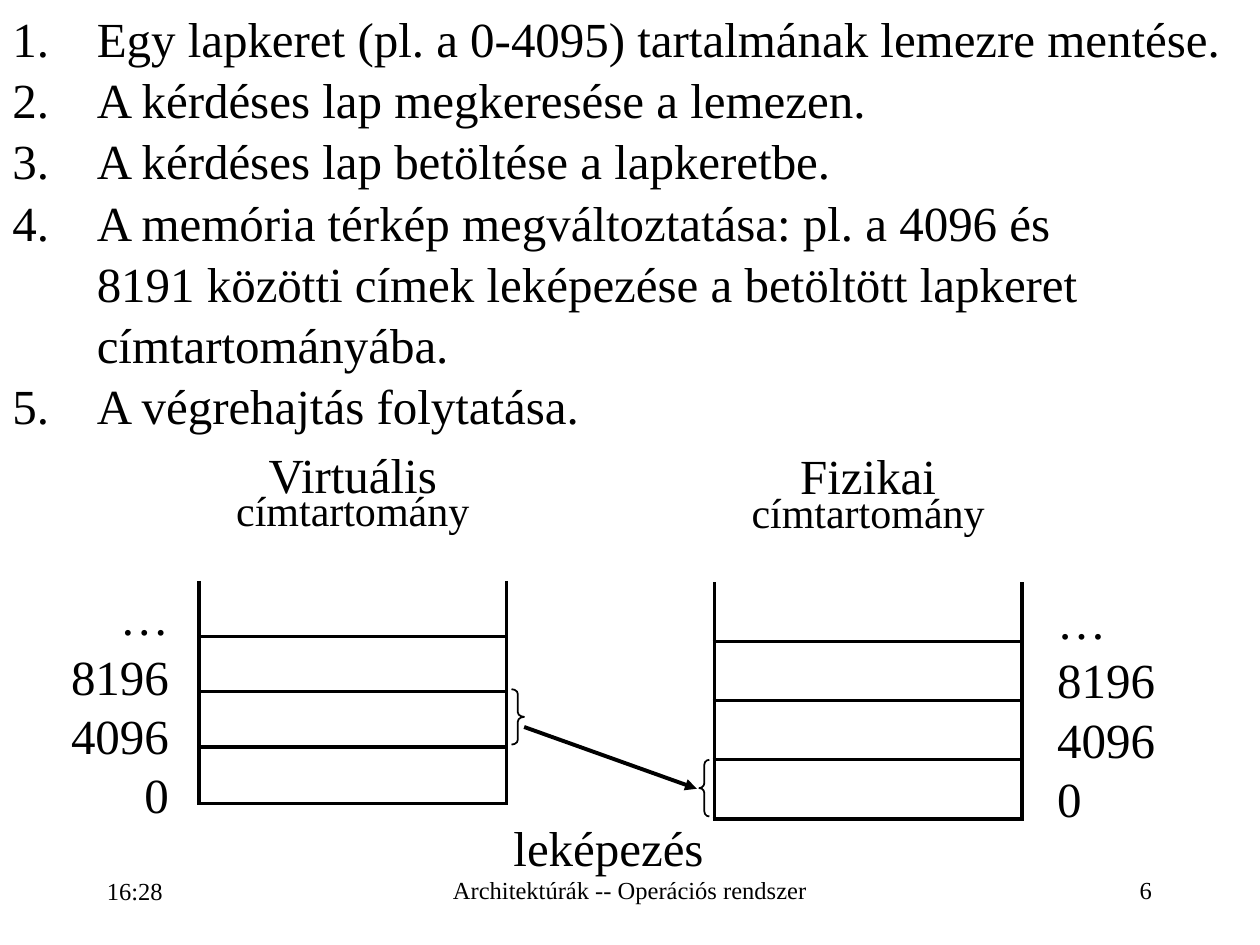
from lxml import etree
from pptx import Presentation
from pptx.dml.color import RGBColor
from pptx.enum.shapes import MSO_CONNECTOR, MSO_SHAPE
from pptx.enum.text import MSO_ANCHOR, PP_ALIGN
from pptx.oxml.ns import qn
from pptx.util import Inches, Pt

LEFT, CENTER, RIGHT = PP_ALIGN.LEFT, PP_ALIGN.CENTER, PP_ALIGN.RIGHT
TOP, MIDDLE = MSO_ANCHOR.TOP, MSO_ANCHOR.MIDDLE
STRAIGHT = MSO_CONNECTOR.STRAIGHT
LEFT_BRACE, RIGHT_BRACE = MSO_SHAPE.LEFT_BRACE, MSO_SHAPE.RIGHT_BRACE

FONT = "Times New Roman"
BLACK = "000000"
LINE_WIDTH = 2.25

STEPS = [
    "Egy lapkeret (pl. a 0-4095) tartalmának lemezre mentése.",
    "A kérdéses lap megkeresése a lemezen.",
    "A kérdéses lap betöltése a lapkeretbe.",
    "A memória térkép megváltoztatása: pl. a 4096 és \v"
    "8191 közötti címek leképezése a betöltött lapkeret \v"
    "címtartományába.",
    "A végrehajtás folytatása.",
]
ADDRESSES = ["…", "8196", "4096", "0"]


def color(hex_string):
    return RGBColor.from_string(hex_string)


def write(paragraph, text, size=28, align=LEFT, spacing=None, before=0):
    """Add a run of text to the paragraph and format both."""
    paragraph.alignment = align
    paragraph.space_before = Pt(before)
    if spacing:
        paragraph.line_spacing = spacing
    first_new = len(paragraph.runs)
    for number, line in enumerate(text.split("\v")):
        if number:
            paragraph.add_line_break()
        paragraph.add_run().text = line
    for run in paragraph.runs[first_new:]:
        run.font.name = FONT
        run.font.size = Pt(size)
        run.font.color.rgb = color(BLACK)


def add_text_box(slide, box, anchor=TOP):
    shape = slide.shapes.add_textbox(*map(Inches, box))
    shape.text_frame.word_wrap = True
    shape.text_frame.vertical_anchor = anchor
    return shape.text_frame


def add_label(slide, box, text, anchor=TOP, **text_format):
    write(add_text_box(slide, box, anchor).paragraphs[0], text, **text_format)


def add_steps(slide, box):
    frame = add_text_box(slide, box)
    for number, step in enumerate(STEPS):
        paragraph = frame.add_paragraph() if number else frame.paragraphs[0]
        write(paragraph, step, spacing=1.04)
        properties = paragraph._p.get_or_add_pPr()
        properties.set("marL", str(Inches(0.67)))
        properties.set("indent", str(-Inches(0.67)))
        bullet_font = etree.SubElement(properties, qn("a:buFont"))
        bullet_font.set("typeface", FONT)
        numbering = etree.SubElement(properties, qn("a:buAutoNum"))
        numbering.set("type", "arabicPeriod")


def set_borders(cell, sides):
    """Draw the named sides (of L, R, T, B) and clear the others."""
    properties = cell._tc.get_or_add_tcPr()
    for side in "LRTB":
        line = etree.SubElement(properties, qn(f"a:ln{side}"))
        if side in sides:
            line.set("w", str(Pt(LINE_WIDTH)))
            fill = etree.SubElement(line, qn("a:solidFill"))
            etree.SubElement(fill, qn("a:srgbClr")).set("val", BLACK)
        else:
            etree.SubElement(line, qn("a:noFill"))


def add_column(slide, left, top, width, heights, borders):
    """Add a one-column table; borders holds the sides drawn for each row."""
    table = slide.shapes.add_table(
        len(heights), 1, Inches(left), Inches(top),
        Inches(width), Inches(sum(heights))).table
    table.first_row = table.horz_banding = False
    for row, height, sides in zip(table.rows, heights, borders):
        row.height = Inches(height)
        cell = row.cells[0]
        cell.margin_top = cell.margin_bottom = 0
        set_borders(cell, sides)
        cell.fill.background()
    return table


def add_address_space(slide, left, top, name, page_heights):
    heights = [0.93] + page_heights
    borders = [""] + ["LRB"] + ["LRTB"] * (len(page_heights) - 1)
    table = add_column(slide, left, top, 2.44, heights, borders)
    paragraph = table.cell(0, 0).text_frame.paragraphs[0]
    for text, size in ((name + " ", 28), ("címtartomány", 24)):
        write(paragraph, text, size=size, align=CENTER, spacing=0.69, before=8)


def add_addresses(slide, left, top, width, align):
    count = len(ADDRESSES)
    table = add_column(slide, left, top, width, [0.47] * count, [""] * count)
    for row, address in zip(table.rows, ADDRESSES):
        write(row.cells[0].text_frame.paragraphs[0], address,
              align=align, spacing=0.69, before=8)


def add_brace(slide, kind, box, curve):
    shape = slide.shapes.add_shape(kind, *map(Inches, box))
    shape.shadow.inherit = False
    shape.fill.background()
    shape.line.color.rgb = color(BLACK)
    shape.line.width = Pt(1)
    shape.adjustments[0] = curve


def add_arrow(slide, start, end):
    connector = slide.shapes.add_connector(STRAIGHT, *map(Inches, start + end))
    connector.line.color.rgb = color(BLACK)
    connector.line.width = Pt(LINE_WIDTH)
    etree.SubElement(connector.line._get_or_add_ln(),
                     qn("a:tailEnd")).set("type", "triangle")
    etree.SubElement(connector._element.spPr, qn("a:effectLst"))


def add_mapping(slide):
    add_address_space(slide, 1.58, 3.68, "Virtuális", [0.44] * 3 + [0.45])
    add_address_space(slide, 5.67, 3.69, "Fizikai", [0.47] * 4)
    add_addresses(slide, 0.29, 4.81, 1.15, RIGHT)
    add_addresses(slide, 8.29, 4.84, 1.11, LEFT)
    add_arrow(slide, (4.16, 5.77), (5.53, 6.26))
    add_brace(slide, RIGHT_BRACE, (4.06, 5.47, 0.1, 0.44), 0.375)
    add_brace(slide, LEFT_BRACE, (5.55, 6.03, 0.08, 0.45), 0.49)
    add_label(slide, (3.38, 6.44, 2.9, 0.57), "leképezés", align=CENTER)


def add_footer(slide):
    for box, text, align in (
            ((0.75, 6.81, 2.07, 0.54), "16:28", LEFT),
            ((3.42, 6.83, 3.16, 0.49),
             "Architektúrák -- Operációs rendszer", CENTER),
            ((7.17, 6.83, 2.07, 0.49), "6", RIGHT)):
        add_label(slide, box, text, MIDDLE, size=14, align=align, spacing=0.93)


def main():
    presentation = Presentation()
    presentation.slide_width = Inches(10)
    presentation.slide_height = Inches(7.5)
    slide = presentation.slides.add_slide(presentation.slide_layouts[6])
    add_steps(slide, (0, 0, 10, 3.45))
    add_mapping(slide)
    add_footer(slide)
    presentation.save("out.pptx")


if __name__ == "__main__":
    main()
